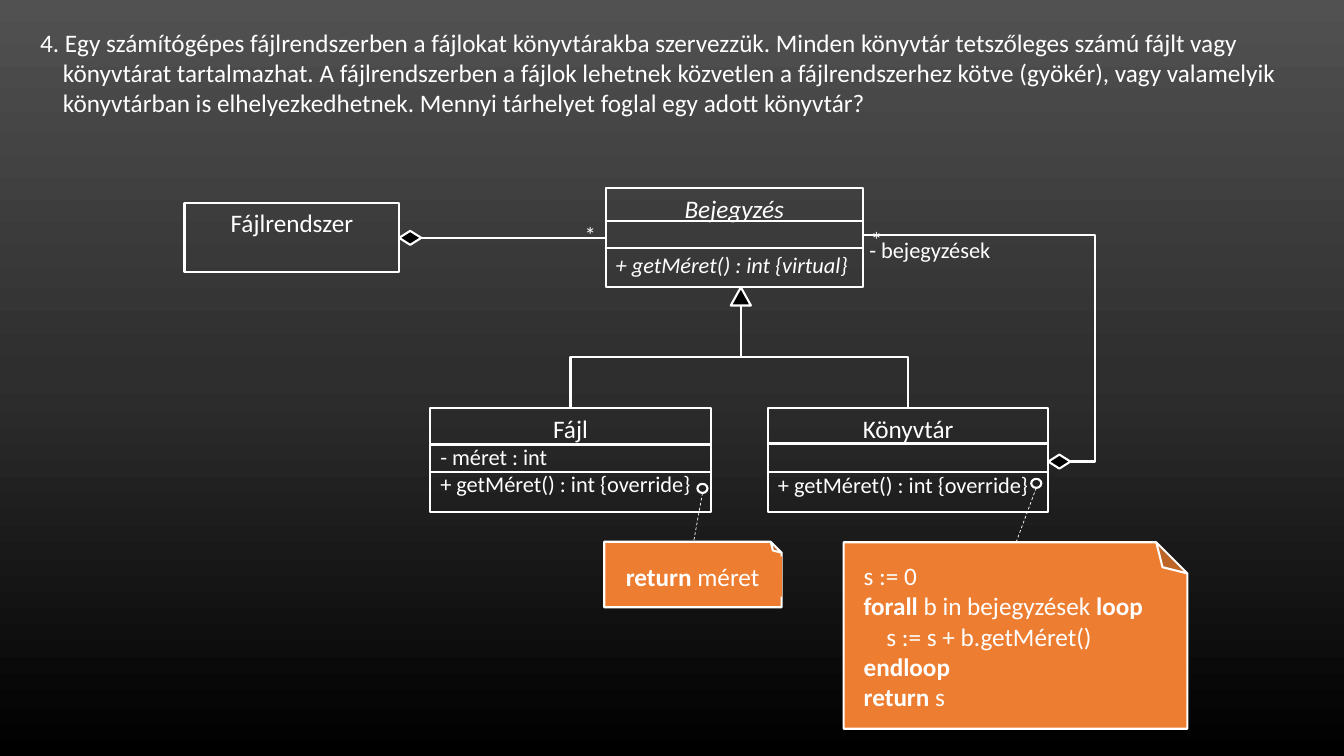
"""Build the file system class diagram slide."""
import copy
from dataclasses import dataclass
from typing import Optional

import pptx
import pptx.dml.color
import pptx.enum.dml
import pptx.enum.shapes
import pptx.enum.text
import pptx.oxml.ns
import pptx.oxml.xmlchemy
import pptx.util

Pt = pptx.util.Pt
qn = pptx.oxml.ns.qn
OxmlElement = pptx.oxml.xmlchemy.OxmlElement
SHAPE = pptx.enum.shapes.MSO_SHAPE
CONNECTOR = pptx.enum.shapes.MSO_CONNECTOR
ALIGN = pptx.enum.text.PP_ALIGN
COLORS = {"white": "FFFFFF", "black": "000000", "note": "ED7D31",
          "bg_top": "515151", "bg_middle": "2E2E2E"}
FONT = "Calibri"
INDENT = 16.3
BLANK_LINE = 19.5


@dataclass
class ClassBox:
    name: str
    x: float
    y: float
    w: float
    h: float
    divider_y: float = 0
    divider_h: float = 0
    attribute: str = ""
    operation: str = ""
    abstract: bool = False


@dataclass
class Note:
    x: float
    y: float
    w: float
    h: float
    ring: tuple[float, float]
    tip: tuple[float, float]


@dataclass
class Label:
    lines: list[str]
    x: float
    y: float
    w: float
    h: float
    size: float = 18
    align: ALIGN = ALIGN.LEFT
    wrap: bool = True
    baseline: int = 0
    indented: tuple[int, ...] = ()
    fill: Optional[str] = None


CLASSES = [
    ClassBox("Fájlrendszer", 131.8, 144.7, 153.4, 49.7),
    ClassBox("Bejegyzés", 432.7, 134.6, 183.6, 70.6, 157.7, 19.4,
             operation="+ getMéret() : int {virtual}", abstract=True),
    ClassBox("Fájl", 307.4, 291.6, 200.2, 74.2, 317.5, 19.4,
             "- méret : int", "+ getMéret() : int {override}"),
    ClassBox("Könyvtár", 548.6, 291.6, 200.2, 74.2, 316.8, 20.2,
             operation="+ getMéret() : int {override}"),
]
NOTES = [
    Note(658.8, 331.2, 133.2, 245.5, (736.6, 342), (725.8, 387.4)),
    Note(471.6, 347, 46.8, 126.7, (498.2, 345.6), (495.4, 387.4)),
]
LABELS = [
    Label(["s := 0", "|forall| b in bejegyzések |loop|", "s := s + b.getMéret()",
           "|endloop|", "|return| s"], 609.8, 396.7, 222.5, 116.6, indented=(2,)),
    Label(["|return| méret"], 439.9, 397.4, 118.8, 28.8, fill="note"),
    Label(["*"], 409.7, 139.7, 23.8, 30.2, 28, ALIGN.CENTER, False, -10000),
    Label(["*"], 614.2, 143.3, 23.8, 30.2, 28, ALIGN.CENTER, False, -10000),
    Label(["- bejegyzések"], 612.7, 164.9, 103, 26.6, 16, ALIGN.CENTER),
    Label(["4. Egy számítógépes fájlrendszerben a fájlokat könyvtárakba szervezzük. "
           "Minden könyvtár tetszőleges számú fájlt vagy",
           "könyvtárat tartalmazhat. A fájlrendszerben a fájlok lehetnek közvetlen a "
           "fájlrendszerhez kötve (gyökér), vagy valamelyik",
           "könyvtárban is elhelyezkedhetnek. Mennyi tárhelyet foglal egy adott könyvtár?"],
          21.6, 15.8, 911.5, 72.7, wrap=False, indented=(1, 2)),
]


def rgb(name: str) -> pptx.dml.color.RGBColor:
    return pptx.dml.color.RGBColor.from_string(COLORS[name])


def add_text(tf, text: str, *, size: float = 18, italic: bool = False,
             align: ALIGN = ALIGN.LEFT, before: float = 0, indent: float = 0,
             baseline: int = 0) -> None:
    """Add a paragraph in which bars switch bold on and off."""
    p = tf.paragraphs[0] if not tf.paragraphs[0].runs else tf.add_paragraph()
    p.alignment = align
    p.space_before = Pt(before)
    if indent:
        p._p.get_or_add_pPr().set("marL", str(Pt(indent)))
    for i, part in enumerate(text.split("|")):
        if not part:
            continue
        r = p.add_run()
        r.text = part
        r.font.name, r.font.size = FONT, Pt(size)
        r.font.bold, r.font.italic = i % 2 == 1, italic
        r.font.color.rgb = rgb("white")
        if baseline:
            r.font._element.set("baseline", str(baseline))


def add_shape(s, kind: SHAPE, x: float, y: float, w: float, h: float,
              fill: Optional[str] = None, outlined: bool = True):
    sp = s.shapes.add_shape(kind, Pt(x), Pt(y), Pt(w), Pt(h))
    sp.shadow.inherit = False
    if fill:
        sp.fill.solid()
        sp.fill.fore_color.rgb = rgb(fill)
    else:
        sp.fill.background()
    if outlined:
        sp.line.color.rgb = rgb("white")
        sp.line.width = Pt(1.5)
    else:
        sp.line.fill.background()
    sp.text_frame.vertical_anchor = pptx.enum.text.MSO_ANCHOR.TOP
    return sp


def add_line(s, begin: tuple[float, float], end: tuple[float, float],
             kind: CONNECTOR = CONNECTOR.STRAIGHT, width: float = 1.5):
    sp = s.shapes.add_connector(kind, *(Pt(v) for v in (*begin, *end)))
    sp.line.color.rgb = rgb("white")
    sp.line.width = Pt(width)
    sp._element.spPr.append(OxmlElement("a:effectLst"))
    return sp


def add_elbow(s, begin: tuple[float, float], end: tuple[float, float],
              turn: int = 0, bend: float = 0.5) -> None:
    """Draw an elbow rotated by a number of quarter turns (-1, 0 or 1)."""
    if turn:
        cx, cy = (begin[0] + end[0]) / 2, (begin[1] + end[1]) / 2
        begin, end = ((cx + turn * (y - cy), cy - turn * (x - cx))
                      for x, y in (begin, end))
    spPr = add_line(s, begin, end, CONNECTOR.ELBOW)._element.spPr
    spPr.find(qn("a:xfrm")).set("rot", str(turn % 4 * 90 * 60000))
    gd = OxmlElement("a:gd")
    gd.set("name", "adj1")
    gd.set("fmla", f"val {round(bend * 100000)}")
    spPr.find(qn("a:prstGeom")).get_or_add_avLst().append(gd)


def add_class(s, box: ClassBox):
    sp = add_shape(s, SHAPE.RECTANGLE, box.x, box.y, box.w, box.h)
    tf = sp.text_frame
    add_text(tf, box.name, italic=box.abstract, align=ALIGN.CENTER)
    if box.attribute:
        add_text(tf, box.attribute, size=16)
    if box.operation:
        add_text(tf, box.operation, size=16, italic=box.abstract,
                 before=0 if box.attribute else BLANK_LINE)
        add_shape(s, SHAPE.RECTANGLE, box.x, box.divider_y, box.w, box.divider_h)
    return sp


def add_note(s, note: Note) -> None:
    sp = add_shape(s, SHAPE.FOLDED_CORNER, note.x, note.y, note.w, note.h, "note")
    sp.rotation = 270
    x, y = note.ring
    add_shape(s, SHAPE.OVAL, x, y, 7.2, 6.5)
    sp = add_line(s, (x + 3.6, y + 6.5), note.tip, width=0.5)
    sp.line.dash_style = pptx.enum.dml.MSO_LINE.DASH


def add_label(s, label: Label) -> None:
    if label.fill:
        sp = add_shape(s, SHAPE.RECTANGLE, label.x, label.y, label.w, label.h,
                       label.fill, outlined=False)
    else:
        sp = s.shapes.add_textbox(Pt(label.x), Pt(label.y), Pt(label.w), Pt(label.h))
    tf = sp.text_frame
    tf.word_wrap = label.wrap
    tf.auto_size = pptx.enum.text.MSO_AUTO_SIZE.SHAPE_TO_FIT_TEXT
    for i, line in enumerate(label.lines):
        add_text(tf, line, size=label.size, align=label.align, baseline=label.baseline,
                 indent=INDENT if i in label.indented else 0)


def set_background(s) -> None:
    fill = s.background.fill
    fill.gradient()
    fill.gradient_angle = 270
    stops = s._element.find(".//" + qn("a:gsLst"))
    stops.insert(1, copy.deepcopy(stops[0]))
    for stop, position, name in zip(fill.gradient_stops, (0, 0.5, 1),
                                    ("bg_top", "bg_middle", "black")):
        stop.position = position
        stop.color.rgb = rgb(name)


def main() -> None:
    prs = pptx.Presentation()
    prs.slide_width, prs.slide_height = Pt(960), Pt(540)
    s = prs.slides.add_slide(prs.slide_layouts[6])
    set_background(s)
    boxes = {box.name: add_class(s, box) for box in CLASSES}
    for note in NOTES:
        add_note(s, note)
    owner, _ = [add_shape(s, SHAPE.DIAMOND, x, y, 15.8, 10, "black")
                for x, y in ((285.1, 164.9), (748.8, 324.7))]
    sp = add_line(s, (300.9, 169.9), (432.7, 169.9))
    sp.begin_connect(owner, 3)
    sp.end_connect(boxes["Bejegyzés"], 1)
    add_shape(s, SHAPE.ISOSCELES_TRIANGLE, 522, 205.2, 14.4, 13, "black")
    for x, turn in ((407.5, 1), (648.7, -1)):
        add_elbow(s, (x, 291.6), (529.2, 218.2), turn)
    add_elbow(s, (764.6, 329.7), (616.3, 167.8), bend=-0.12)
    for label in LABELS:
        add_label(s, label)
    prs.save("out.pptx")


if __name__ == "__main__":
    main()
